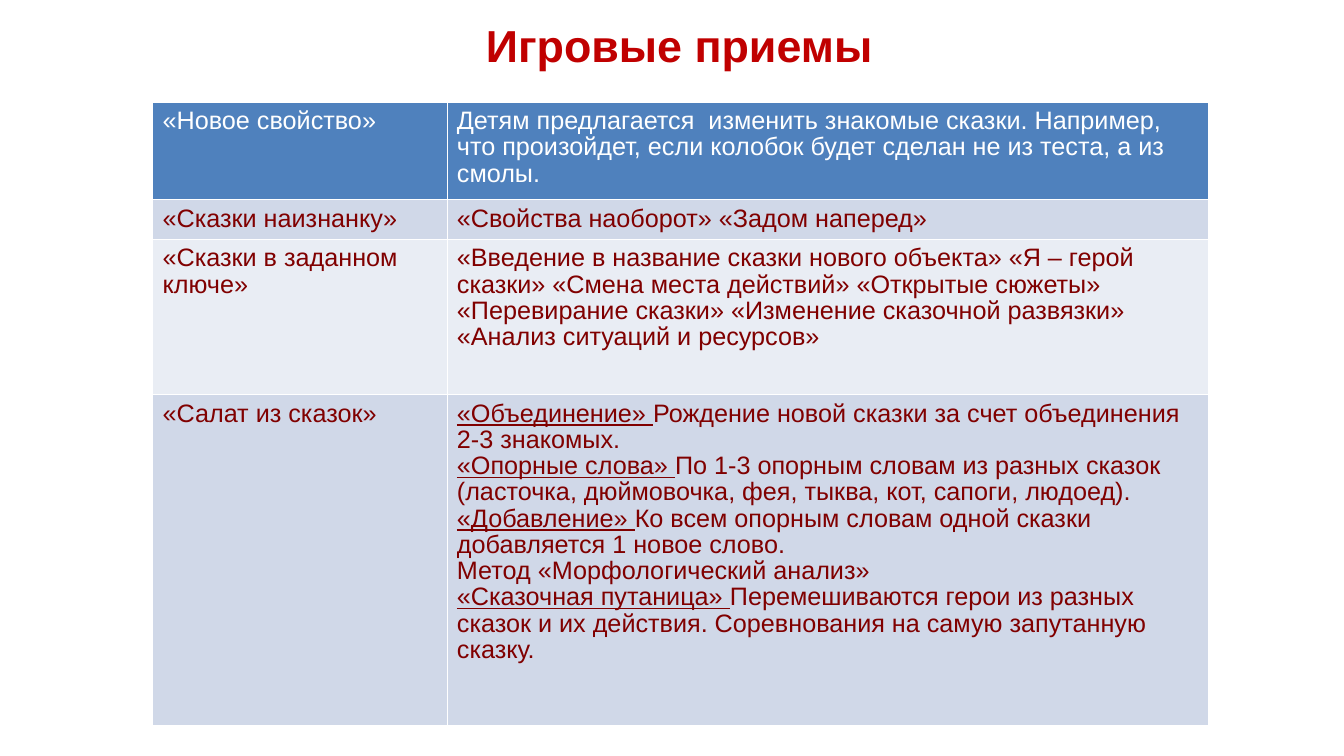
import lxml.etree
import pptx
import pptx.dml.color
import pptx.enum.text
import pptx.oxml.ns
import pptx.util

COLOURS = {
    "title": "C00000",
    "header": "4F81BD",
    "header_text": "FFFFFF",
    "band_dark": "D0D8E8",
    "band_light": "E9EDF4",
    "body_text": "800000",
    "border": "FFFFFF",
}

# Each technique: name, then paragraphs of (underlined lead, plain text)
TECHNIQUES = [
    ("«Новое свойство»", [
        ("", "Детям предлагается  изменить знакомые сказки. Например, что произойдет, "
             "если колобок будет сделан не из теста, а из смолы.")]),
    ("«Сказки наизнанку»", [("", "«Свойства наоборот» «Задом наперед»")]),
    ("«Сказки в заданном ключе»", [
        ("", "«Введение в название сказки нового объекта» «Я – герой сказки» "
             "«Смена места действий» «Открытые сюжеты» «Перевирание сказки» "
             "«Изменение сказочной развязки» «Анализ ситуаций и ресурсов»")]),
    ("«Салат из сказок»", [
        ("«Объединение» ", "Рождение новой сказки за счет объединения 2-3 знакомых."),
        ("«Опорные слова» ", "По 1-3 опорным словам из разных сказок "
                             "(ласточка, дюймовочка, фея, тыква, кот, сапоги, людоед)."),
        ("«Добавление» ", "Ко всем опорным словам одной сказки добавляется 1 новое слово."),
        ("", "Метод «Морфологический анализ»"),
        ("«Сказочная путаница» ", "Перемешиваются герои из разных сказок и их действия. "
                                  "Соревнования на самую запутанную сказку.")]),
]


class SlideBuilder:
    """Holds the style and the current slide; lengths are percent of the slide."""

    font = "Arial"
    title_size = 32
    body_size = 18
    line_spacing = 0.93
    thin, thick = 0.23, 0.75

    def __init__(self, deck):
        self.deck = deck
        self.slide = deck.slides.add_slide(deck.slide_layouts[5])

    def across(self, percent):
        return round(self.deck.slide_width * percent / 100)

    def down(self, percent):
        return round(self.deck.slide_height * percent / 100)

    def run(self, paragraph, text, size, colour, bold=False, underline=False):
        run = paragraph.add_run()
        run.text = text
        run.font.name = self.font
        run.font.size = pptx.util.Pt(size)
        run.font.bold = bold
        run.font.underline = underline
        run.font.color.rgb = pptx.dml.color.RGBColor.from_string(COLOURS[colour])

    def title(self, text, left, top, width, height):
        heading = self.slide.shapes.title
        heading.left, heading.top = self.across(left), self.down(top)
        heading.width, heading.height = self.across(width), self.down(height)
        frame = heading.text_frame
        frame.margin_left = frame.margin_right = frame.margin_top = frame.margin_bottom = 0
        frame.vertical_anchor = pptx.enum.text.MSO_ANCHOR.MIDDLE
        frame.auto_size = pptx.enum.text.MSO_AUTO_SIZE.NONE
        frame.paragraphs[0].alignment = pptx.enum.text.PP_ALIGN.CENTER
        self.run(frame.paragraphs[0], text, self.title_size, "title", bold=True)

    def borders(self, cell, **widths):
        properties = cell._tc.get_or_add_tcPr()
        for side in "LRTB":
            line = lxml.etree.SubElement(
                properties, pptx.oxml.ns.qn(f"a:ln{side}"),
                w=str(pptx.util.Pt(widths.get(side, self.thin))))
            fill = lxml.etree.SubElement(line, pptx.oxml.ns.qn("a:solidFill"))
            lxml.etree.SubElement(fill, pptx.oxml.ns.qn("a:srgbClr"), val=COLOURS["border"])

    def cell(self, cell, paragraphs, fill, colour, **border_widths):
        self.borders(cell, **border_widths)
        cell.fill.solid()
        cell.fill.fore_color.rgb = pptx.dml.color.RGBColor.from_string(COLOURS[fill])
        cell.margin_left = cell.margin_right = pptx.util.Inches(0.1)
        cell.margin_top, cell.margin_bottom = pptx.util.Inches(0.07), pptx.util.Inches(0.05)
        for index, (lead, text) in enumerate(paragraphs):
            frame = cell.text_frame
            paragraph = frame.add_paragraph() if index else frame.paragraphs[0]
            paragraph.line_spacing = self.line_spacing
            if lead:
                self.run(paragraph, lead, self.body_size, colour, underline=True)
            self.run(paragraph, text, self.body_size, colour)

    def table(self, rows, left, top, widths, heights):
        grid = self.slide.shapes.add_table(
            len(rows), len(widths), self.across(left), self.down(top),
            self.across(sum(widths)), self.down(sum(heights))).table
        for column, width in zip(grid.columns, widths):
            column.width = self.across(width)
        for index, (name, description) in enumerate(rows):
            grid.rows[index].height = self.down(heights[index])
            # First row is the header; the rest alternate
            fill = "header" if index == 0 else ("band_light", "band_dark")[index % 2]
            colour = "body_text" if index else "header_text"
            edges = {0: {"B": self.thick}, 1: {"T": self.thick}}.get(index, {})
            for column, paragraphs in enumerate(([("", name)], description)):
                self.cell(grid.cell(index, column), paragraphs, fill, colour, **edges)


def main():
    deck = pptx.Presentation()
    deck.slide_width = pptx.util.Inches(13.33)
    deck.slide_height = pptx.util.Inches(7.5)
    builder = SlideBuilder(deck)

    # Heading
    builder.title("Игровые приемы", left=31.8, top=2.13, width=37.5, height=7.47)

    # Table of techniques
    builder.table(TECHNIQUES, left=11.35, top=13.45, widths=[21.9, 56.65],
                  heights=[12.95, 5.2, 20.55, 43.75])

    deck.save("out.pptx")


if __name__ == "__main__":
    main()
